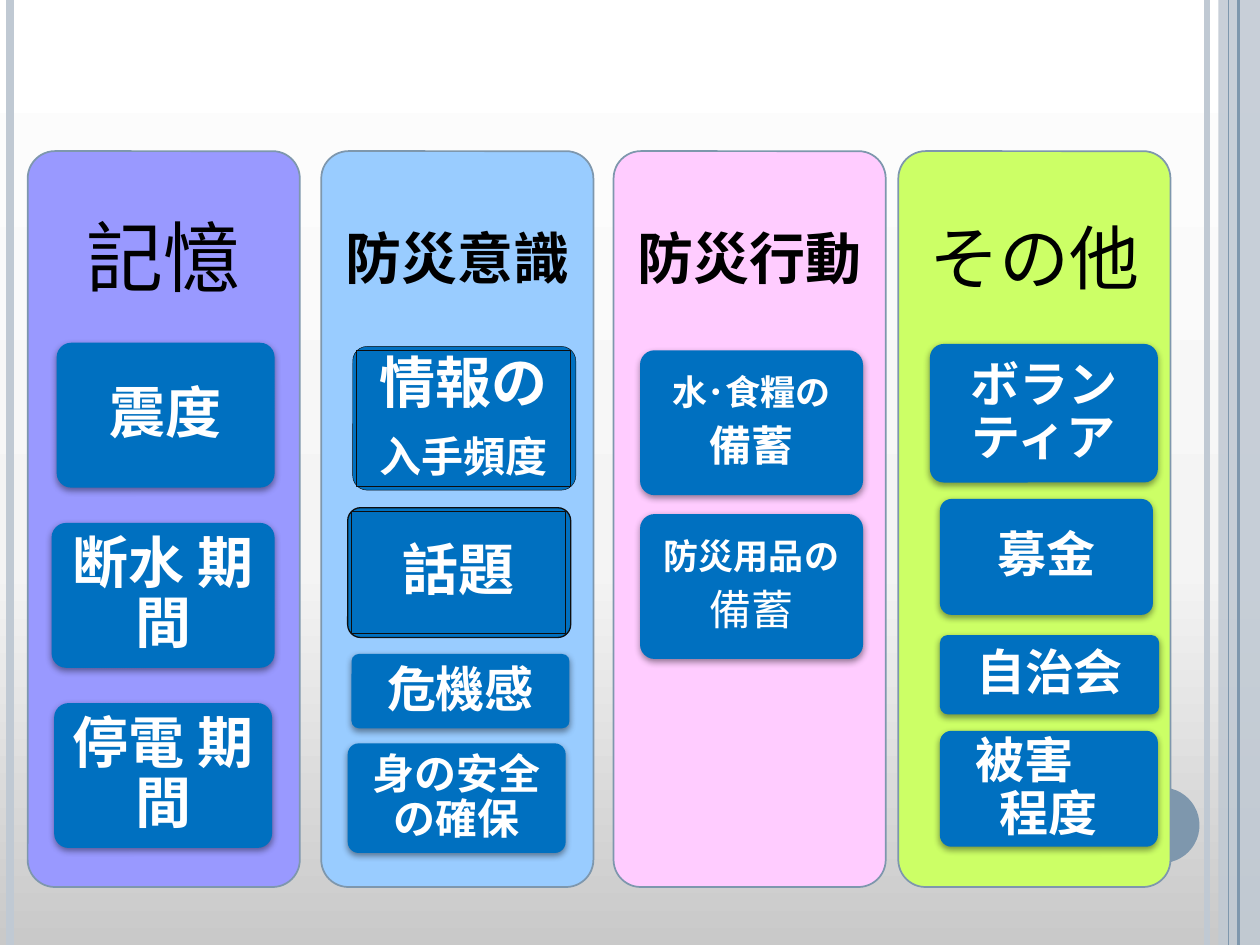
"""Build a slide of four survey topic columns, each with a heading and item cards."""
from copy import deepcopy

from lxml import etree
from pptx import Presentation
from pptx import util as u
from pptx.dml.color import RGBColor
from pptx.enum import shapes, text
from pptx.oxml.ns import qn

THEME = {
    "font": "Noto Sans CJK JP", "black": "000000", "white": "FFFFFF",
    "card": "0070C0", "edge": "0D0D0D", "steel": "7E97AD", "mist": "C0C9D3",
    "background": [(0, "C9C9C9"), (0.4, "F4F4F4"), (1, "FFFFFF")],
    "small": 20, "medium": 24, "large": 28, "huge": 32, "wide": 40, "title": 44,
}
SMALL, MEDIUM, LARGE, HUGE = (THEME[name] for name in ("small", "medium", "large", "huge"))
COLUMN_TOP, COLUMN_WIDTH, COLUMN_HEIGHT, HEADING_HEIGHT = 1.2, 2.16, 5.84, 1.75
COLUMNS = [
    (0.22, "9999FF", "記憶", THEME["title"], False, 0.18, [
        (0.23, 2.72, 1.73, 1.15, [("震度", HUGE, True)], None),
        (0.19, 4.15, 1.77, 1.15, [("断水 期間", HUGE, True)], None),
        (0.21, 5.58, 1.73, 1.15, [("停電 期間", HUGE, True)], None)]),
    (2.55, "99CCFF", "防災意識", HUGE, True, 0.13, [
        (0.25, 2.75, 1.77, 1.14, [("情報の", HUGE, True), ("入手頻度", MEDIUM, True)], 0.25),
        (0.21, 4.03, 1.77, 1.03, [("話題", HUGE, True)], 0),
        (0.24, 5.19, 1.73, 0.59, [("危機感", LARGE, True)], None),
        (0.21, 5.9, 1.73, 0.87, [("身の安全の確保", MEDIUM, True)], None)]),
    (4.87, "FFCCFF", "防災行動", HUGE, True, 0.13, [
        (0.21, 2.78, 1.77, 1.15, [("水･食糧の", SMALL, True), ("備蓄", MEDIUM, True)], None),
        (0.21, 4.08, 1.77, 1.15, [("防災用品の", SMALL, True), ("備蓄", MEDIUM, False)], None)]),
    (7.13, "CCFF66", "その他", THEME["wide"], False, 0.17, [
        (0.25, 2.73, 1.81, 1.1, [("ボランティア", LARGE, True)], None),
        (0.33, 3.96, 1.69, 0.92, [("募金", LARGE, True)], None),
        (0.33, 5.04, 1.74, 0.63, [("自治会", LARGE, True)], None),
        (0.33, 5.8, 1.73, 0.92, [("被害　程度", LARGE, True)], None)]),
]


def add_box(page, kind, area, fill, line=None, width=1):
    box = page.shapes.add_shape(kind, *(u.Inches(length) for length in area))
    box.shadow.inherit = False
    box.fill.solid()
    box.fill.fore_color.rgb = RGBColor.from_string(fill)
    if line:
        box.line.color.rgb = RGBColor.from_string(line)
        box.line.width = u.Pt(width)
    else:
        box.line.fill.background()
    if kind == shapes.MSO_SHAPE.ROUNDED_RECTANGLE:
        box.adjustments[0] = 0.1
    return box


def write(box, lines, color, side, end):
    frame = box.text_frame
    frame.word_wrap = True
    frame.vertical_anchor = text.MSO_ANCHOR.MIDDLE
    frame.margin_left = frame.margin_right = u.Inches(side)
    frame.margin_top = frame.margin_bottom = u.Inches(end)
    frame.text = "\n".join(line[0] for line in lines)
    for para, (_, size, bold) in zip(frame.paragraphs, lines):
        para.alignment = text.PP_ALIGN.CENTER
        para.line_spacing = 0.9
        para.space_after = u.Pt(size * 0.35)
        for span in para.runs:
            span.font.size = u.Pt(size)
            span.font.bold = bold
            span.font.color.rgb = RGBColor.from_string(color)
            span.font.name = THEME["font"]
            etree.SubElement(span.font._element, qn("a:ea"), typeface=THEME["font"])


deck = Presentation()
deck.slide_width, deck.slide_height = u.Inches(10), u.Inches(7.5)
page = deck.slides.add_slide(deck.slide_layouts[6])

backdrop = page.background.fill
backdrop.gradient()
backdrop.gradient_angle = 90
stop_list = page.element.find(".//" + qn("a:gsLst"))
stop_list.insert(1, deepcopy(stop_list[0]))
for stop, (position, color) in zip(backdrop.gradient_stops, THEME["background"]):
    stop.position = position
    stop.color.rgb = RGBColor.from_string(color)

band = add_box(page, shapes.MSO_SHAPE.RECTANGLE, (9.67, 0, 0.33, 7.5), THEME["mist"])
band_color = band.element.find(".//" + qn("a:srgbClr"))
etree.SubElement(band_color, qn("a:alpha"), val="87000")
for left, color, width in [(9.58, "mist", 3), (0.08, "mist", 4.5),
                           (9.83, "steel", 1.5), (9.75, "steel", 0.75)]:
    stripe = page.shapes.add_connector(
        shapes.MSO_CONNECTOR.STRAIGHT, u.Inches(left), 0, u.Inches(left), deck.slide_height)
    stripe.line.color.rgb = RGBColor.from_string(THEME[color])
    stripe.line.width = u.Pt(width)
    etree.SubElement(stripe.element.spPr, qn("a:effectLst"))
add_box(page, shapes.MSO_SHAPE.OVAL, (8.92, 6.25, 0.6, 0.6), THEME["steel"])

for left, color, heading, size, bold, margin, cards in COLUMNS:
    add_box(page, shapes.MSO_SHAPE.ROUNDED_RECTANGLE,
            (left, COLUMN_TOP, COLUMN_WIDTH, COLUMN_HEIGHT), color, THEME["steel"])
    title = page.shapes.add_textbox(*(u.Inches(length) for length in (
        left, COLUMN_TOP, COLUMN_WIDTH, HEADING_HEIGHT)))
    write(title, [(heading, size, bold)], THEME["black"], margin, margin)
    for offset, top, width, height, lines, outline in cards:
        area = (left + offset, top, width, height)
        edge = None if outline is None else THEME["edge"]
        card = add_box(page, shapes.MSO_SHAPE.ROUNDED_RECTANGLE, area,
                       THEME["card"], edge, outline or 0)
        if edge:
            inner = (left + offset + 0.03, top + 0.03, width - 0.07, height - 0.06)
            card = add_box(page, shapes.MSO_SHAPE.RECTANGLE, inner,
                           THEME["card"], edge, outline)
        else:
            effects = card.element.spPr.find(qn("a:effectLst"))
            shadow = etree.SubElement(
                effects, qn("a:outerShdw"), blurRad=str(u.Pt(4)), dist=str(u.Pt(1.6)),
                dir="5400000", rotWithShape="0")
            shade = etree.SubElement(shadow, qn("a:srgbClr"), val=THEME["black"])
            etree.SubElement(shade, qn("a:alpha"), val="42000")
        write(card, lines, THEME["white"], 0.08, 0.06)

deck.save("out.pptx")
